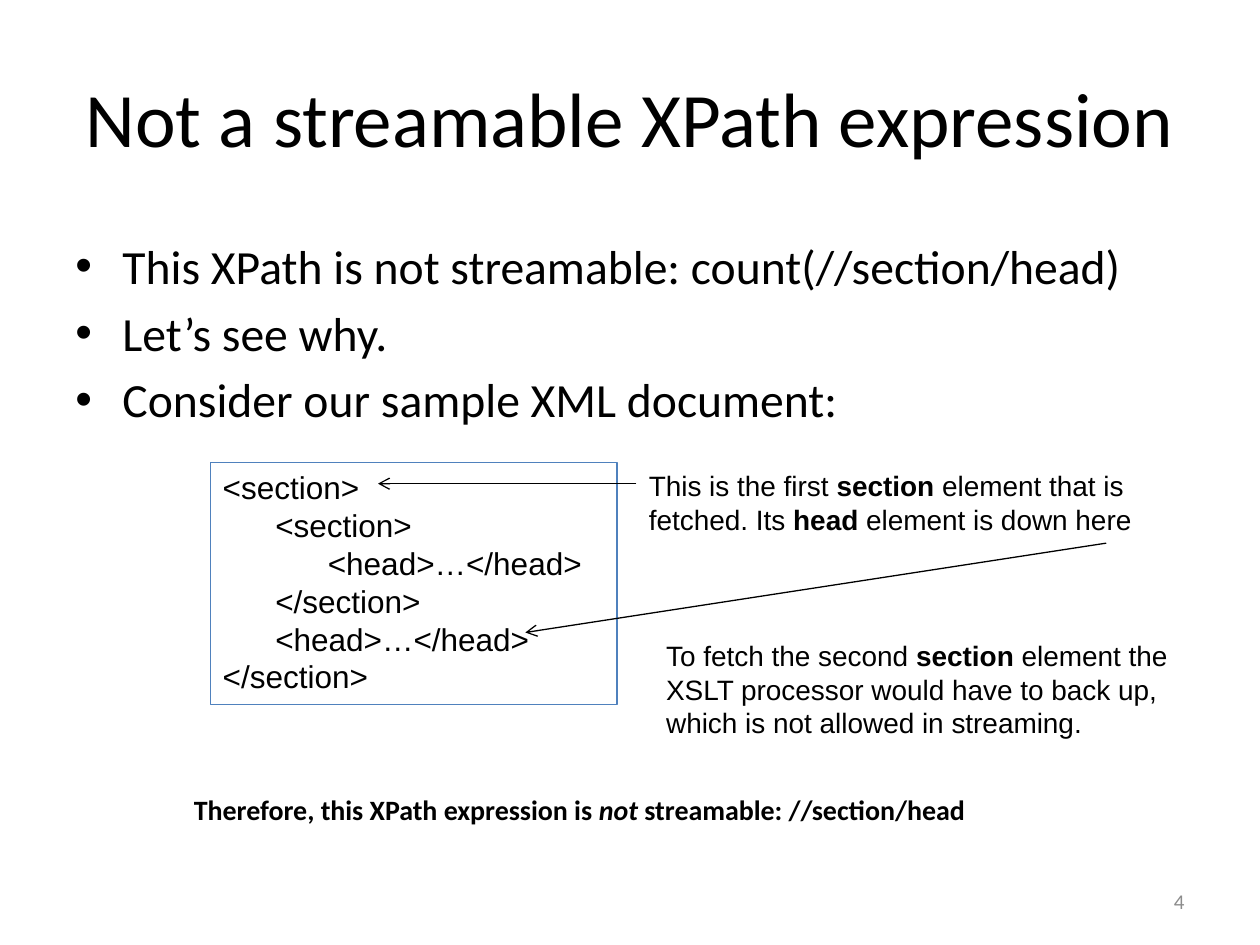
from lxml import etree
from pptx import Presentation
from pptx.dml.color import RGBColor
from pptx.enum.shapes import MSO_CONNECTOR, MSO_SHAPE
from pptx.enum.text import MSO_ANCHOR, PP_ALIGN
from pptx.oxml.ns import qn
from pptx.util import Cm, Pt

BLACK = RGBColor(0x00, 0x00, 0x00)
GREY = RGBColor(0x8C, 0x8C, 0x8C)
BLUE = RGBColor(0x4F, 0x81, 0xBD)
LEFT, MID, RIGHT = PP_ALIGN.LEFT, PP_ALIGN.CENTER, PP_ALIGN.RIGHT
TOP, CENTRE = MSO_ANCHOR.TOP, MSO_ANCHOR.MIDDLE
RECT, LINE = MSO_SHAPE.RECTANGLE, MSO_CONNECTOR.STRAIGHT
BOLD, ITALIC = {"bold": True}, {"bold": True, "italic": True}


def write(shape, paras, font, size, color=BLACK, align=LEFT, anchor=TOP, wrap=True, **gaps):
    """Fill a shape with paragraphs, each a list of (text, format) runs."""
    frame = shape.text_frame
    frame.word_wrap = wrap
    frame.vertical_anchor = anchor
    for i, runs in enumerate(paras):
        para = frame.add_paragraph() if i else frame.paragraphs[0]
        para.alignment = align
        for name, value in gaps.items():
            setattr(para, name, value)
        for text, style in runs:
            run = para.add_run()
            run.text = text
            run.font.color.rgb = color
            for name, value in {"name": font, "size": Pt(size), **style}.items():
                setattr(run.font, name, value)


def indent(para, margin, first=0):
    props = para._p.get_or_add_pPr()
    props.set("marL", str(Cm(margin)))
    props.set("indent", str(Cm(first)))
    return props


deck = Presentation()
deck.slide_width, deck.slide_height = Cm(25.4), Cm(19.05)
slide = deck.slides.add_slide(deck.slide_layouts[5])
shapes = slide.shapes

# Title
title = shapes.title
title.left, title.top, title.width, title.height = Cm(1.27), Cm(0.76), Cm(22.86), Cm(3.18)
write(title, [[("Not a streamable XPath expression", {})]], "Calibri", 44,
      align=MID, anchor=CENTRE)

# Bullets
points = ["This XPath is not streamable: count(//section/head)",
          "Let’s see why.",
          "Consider our sample XML document:"]
body = shapes.add_textbox(Cm(1.27), Cm(4.65), Cm(22.86), Cm(4.45))
write(body, [[(point, {})] for point in points], "Calibri", 27.2, space_before=Pt(5.44))
for para in body.text_frame.paragraphs:
    props = indent(para, 0.95, -0.95)
    etree.SubElement(props, qn("a:buFont")).set("typeface", "Arial")
    etree.SubElement(props, qn("a:buChar")).set("char", "•")

# Sample XML, as (depth, text)
sample = [(0, "<section>"), (1, "<section>"), (2, "<head>…</head>"),
          (1, "</section>"), (1, "<head>…</head>"), (0, "</section>")]
code = shapes.add_shape(RECT, Cm(4.24), Cm(9.32), Cm(8.2), Cm(4.88))
code.shadow.inherit = False
code.fill.background()
code.line.color.rgb = BLUE
code.line.width = Pt(0.75)
write(code, [[(text, {})] for _, text in sample], "Arial", 18)
for para, (depth, _) in zip(code.text_frame.paragraphs, sample):
    indent(para, depth * 1.06)

# Remarks and page number
first = [("This is the first ", {}), ("section", BOLD),
         (" element that is fetched. Its ", {}), ("head", BOLD),
         (" element is down here", {})]
second = [("To fetch the second ", {}), ("section", BOLD),
          (" element the XSLT processor would have to back up, "
           "which is not allowed in streaming.", {})]
result = [("Therefore, this XPath expression is ", BOLD), ("not", ITALIC),
          (" streamable: //section/head", BOLD)]
note = {"size": 16, "space_after": Pt(6)}
texts = [
    (12.83, 9.32, 10.74, 1.63, first, {"font": "Arial", **note}),
    (13.18, 12.75, 11.15, 2.31, second, {"font": "Arial", **note}),
    (3.66, 15.85, 16.26, 0.94, result, {"font": "Calibri", "wrap": False, **note}),
    (18.21, 17.65, 5.92, 1.02, [("4", {})],
     {"font": "Calibri", "size": 12, "color": GREY, "align": RIGHT, "anchor": CENTRE}),
]
for left, top, width, height, runs, look in texts:
    box = shapes.add_textbox(Cm(left), Cm(top), Cm(width), Cm(height))
    write(box, [runs], **look)

# Arrows from the first remark into the sample
for ends in [(12.83, 9.75, 7.62, 9.75), (22.3, 10.95, 10.59, 12.75)]:
    arrow = shapes.add_connector(LINE, *map(Cm, ends))
    arrow.line.color.rgb = BLACK
    arrow.line.width = Pt(0.75)
    etree.SubElement(arrow.line._get_or_add_ln(), qn("a:tailEnd")).set("type", "arrow")
    etree.SubElement(arrow._element.spPr, qn("a:effectLst"))

deck.save("out.pptx")
